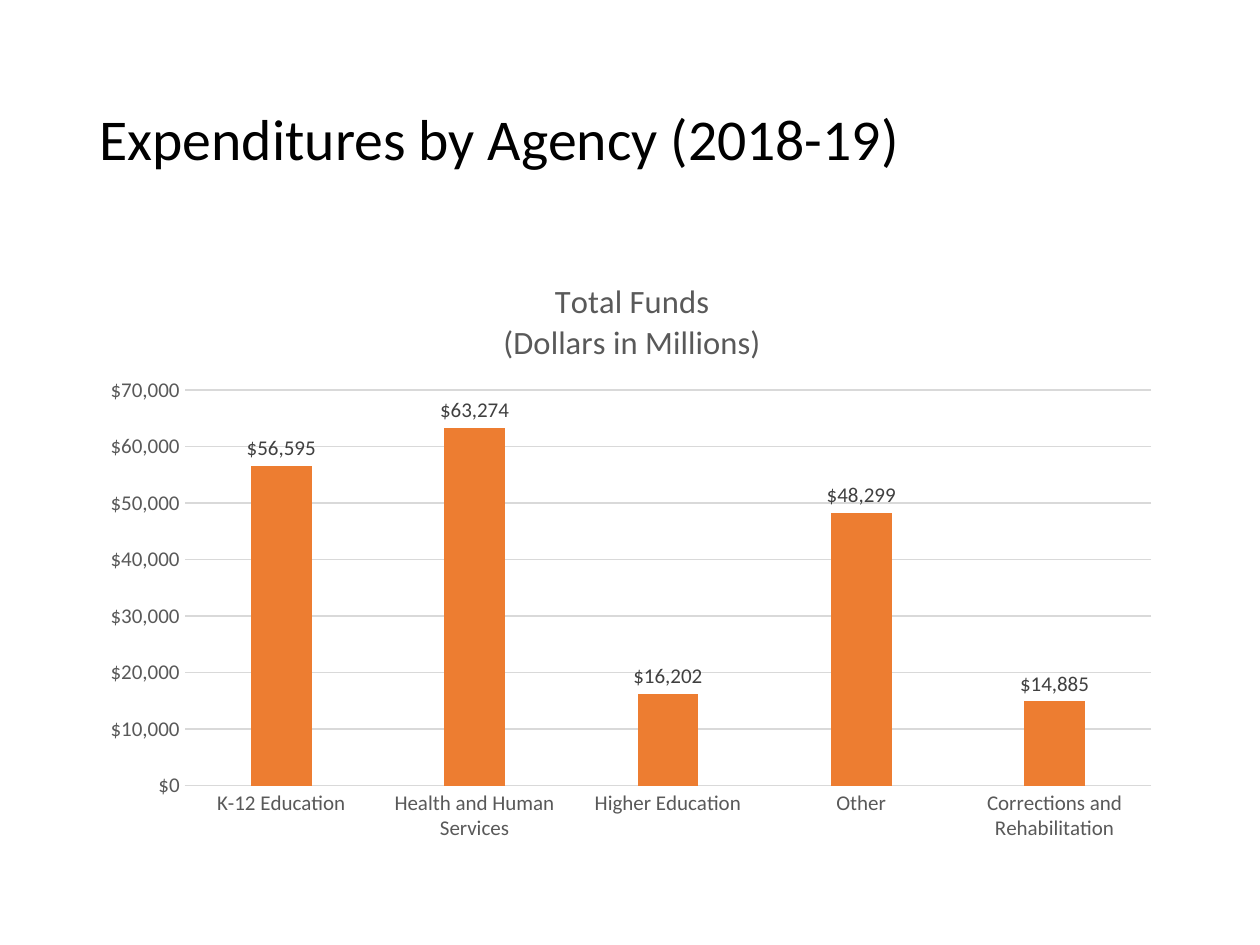
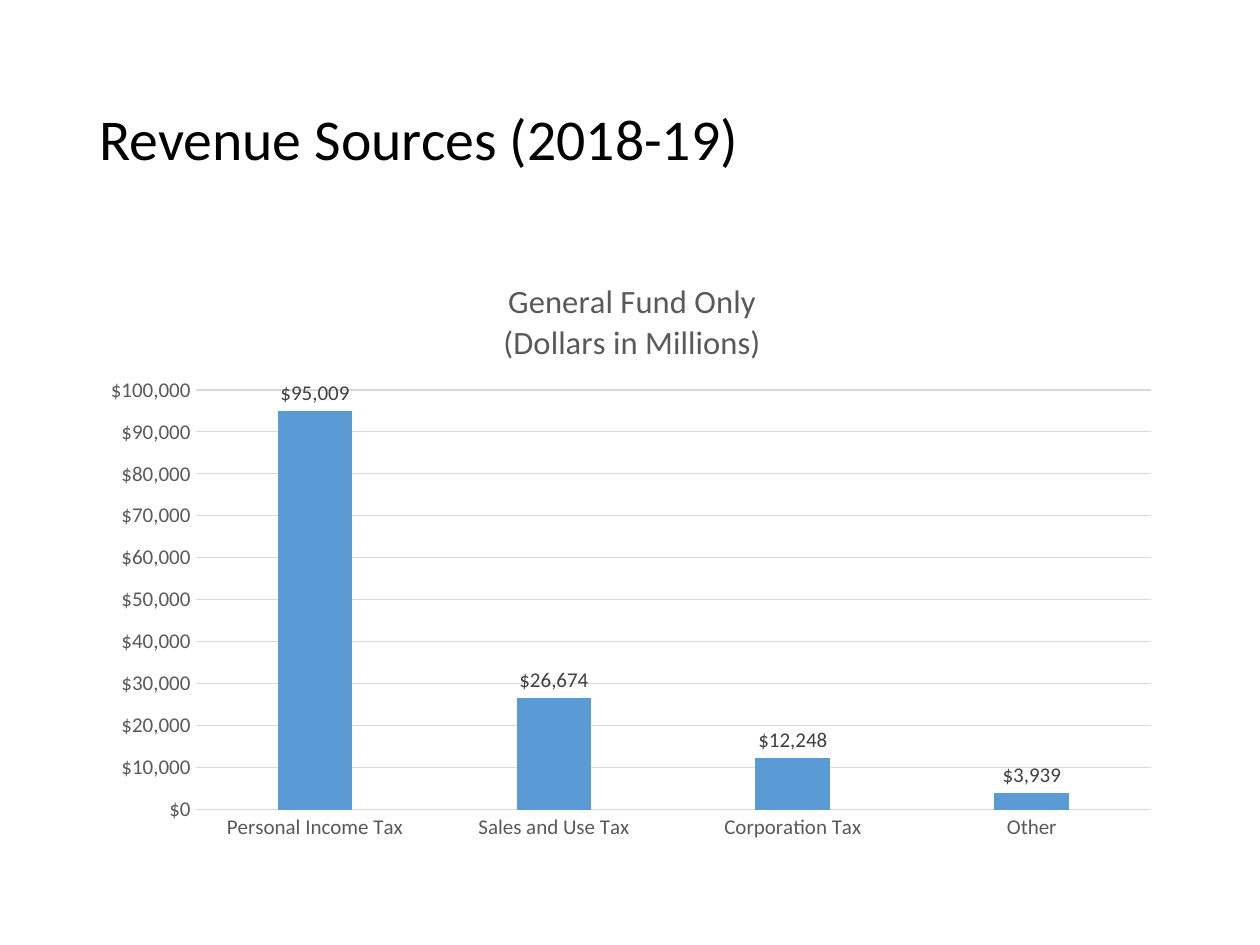
from dataclasses import dataclass
from pptx import Presentation
from pptx.chart.data import CategoryChartData
from pptx.dml.color import RGBColor
from pptx.enum.chart import XL_CHART_TYPE, XL_LABEL_POSITION, XL_TICK_MARK
from pptx.enum.text import MSO_ANCHOR, PP_ALIGN
from pptx.oxml import parse_xml
from pptx.oxml.ns import nsdecls
from pptx.util import Inches, Pt


@dataclass(frozen=True)
class Theme:
    font: str = "Calibri"
    ink: str = "000000"
    muted: str = "595959"
    label: str = "404040"
    rule: str = "D9D9D9"
    orange: str = "ED7D31"
    blue: str = "5B9BD5"
    title_size: float = 33
    chart_title_size: float = 18.6
    chart_size: float = 12
    rule_width: float = 0.75
    money: str = '"$"#,##0'


@dataclass(frozen=True)
class Box:
    left: float
    top: float
    width: float
    height: float

    def lengths(self):
        return [Inches(side) for side in (self.left, self.top, self.width, self.height)]


@dataclass(frozen=True)
class ChartPage:
    title: str
    chart_title: tuple
    values: dict
    color: str
    maximum: int
    plot: Box


THEME = Theme()
WIDTH, HEIGHT = 10, 7.5
MARGIN = 0.069 * WIDTH
CONTENT = WIDTH - 2 * MARGIN
TITLE_BOX = Box(MARGIN, 0.4, CONTENT, 1.45)
CHART_BOX = Box(MARGIN, 2, CONTENT, 4.76)

PAGES = [
    ChartPage(
        "Expenditures by Agency (2018-19)",
        ("Total Funds", "(Dollars in Millions)"),
        {
            "K-12 Education": 56595,
            "Health and Human Services": 63274,
            "Higher Education": 16202,
            "Other": 48299,
            "Corrections and Rehabilitation": 14885,
        },
        THEME.orange,
        70000,
        Box(0.09, 0.23, 0.89, 0.66),
    ),
    ChartPage(
        "Revenue Sources (2018-19)",
        ("General Fund Only", "(Dollars in Millions)"),
        {
            "Personal Income Tax": 95009,
            "Sales and Use Tax": 26674,
            "Corporation Tax": 12248,
            "Other": 3939,
        },
        THEME.blue,
        100000,
        Box(0.1, 0.23, 0.88, 0.7),
    ),
]


def style_font(font, size, color):
    font.name = THEME.font
    font.size = Pt(size)
    font.bold = False
    font.color.rgb = RGBColor.from_string(color)


def style_rule(line):
    line.color.rgb = RGBColor.from_string(THEME.rule)
    line.width = Pt(THEME.rule_width)


def manual_layout(settings):
    entries = "".join(f'<c:{name} val="{value}"/>' for name, value in settings.items())
    return parse_xml(
        f'<c:layout {nsdecls("c")}><c:manualLayout>{entries}</c:manualLayout></c:layout>'
    )


def add_title(page, box, text):
    frame = page.shapes.add_textbox(*box.lengths()).text_frame
    frame.word_wrap = True
    frame.vertical_anchor = MSO_ANCHOR.MIDDLE
    para = frame.paragraphs[0]
    para.line_spacing = 0.9
    span = para.add_run()
    span.text = text
    style_font(span.font, THEME.title_size, THEME.ink)


def add_chart_title(chart, lines):
    chart.has_title = True
    title = chart.chart_title
    frame = title.text_frame
    for index, line in enumerate(lines):
        para = frame.add_paragraph() if index else frame.paragraphs[0]
        para.alignment = PP_ALIGN.CENTER
        span = para.add_run()
        span.text = line
        style_font(span.font, THEME.chart_title_size, THEME.muted)
    element = title._element
    for layout in element.xpath("c:layout"):
        element.remove(layout)
    position = {"xMode": "edge", "yMode": "edge", "x": 0.38, "y": 0.04}
    element.xpath("c:tx")[0].addnext(manual_layout(position))


def style_axes(chart, maximum):
    for axis in (chart.category_axis, chart.value_axis):
        axis.major_tick_mark = XL_TICK_MARK.NONE
        axis.minor_tick_mark = XL_TICK_MARK.NONE
        style_font(axis.tick_labels.font, THEME.chart_size, THEME.muted)
    style_rule(chart.category_axis.format.line)
    value_axis = chart.value_axis
    value_axis.format.line.fill.background()
    value_axis.minimum_scale = 0
    value_axis.maximum_scale = maximum
    value_axis.major_unit = 10000
    value_axis.has_major_gridlines = True
    style_rule(value_axis.major_gridlines.format.line)
    value_axis.tick_labels.number_format = THEME.money
    value_axis.tick_labels.number_format_is_linked = False


def style_columns(plot, color):
    plot.gap_width = 219
    plot.overlap = -27
    plot.vary_by_categories = False
    series = plot.series[0]
    series.format.fill.solid()
    series.format.fill.fore_color.rgb = RGBColor.from_string(color)
    labels = series.data_labels
    labels.show_value = True
    labels.position = XL_LABEL_POSITION.OUTSIDE_END
    labels.number_format = THEME.money
    labels.number_format_is_linked = False
    style_font(labels.font, THEME.chart_size, THEME.label)


def place_plot(chart, box):
    area = chart._chartSpace.xpath("c:chart/c:plotArea")[0]
    for layout in area.xpath("c:layout"):
        area.remove(layout)
    area.insert(0, manual_layout({
        "layoutTarget": "inner", "xMode": "edge", "yMode": "edge",
        "x": box.left, "y": box.top, "w": box.width, "h": box.height,
    }))


def add_column_chart(page, box, content):
    data = CategoryChartData(number_format=THEME.money)
    data.categories = list(content.values)
    data.add_series("Series 1", list(content.values.values()))
    frame = page.shapes.add_chart(XL_CHART_TYPE.COLUMN_CLUSTERED, *box.lengths(), data)
    chart = frame.chart
    chart.has_legend = False
    style_font(chart.font, THEME.chart_size, THEME.ink)
    add_chart_title(chart, content.chart_title)
    style_axes(chart, content.maximum)
    style_columns(chart.plots[0], content.color)
    place_plot(chart, content.plot)


def add_chart_page(deck, content):
    page = deck.slides.add_slide(deck.slide_layouts[6])
    add_title(page, TITLE_BOX, content.title)
    add_column_chart(page, CHART_BOX, content)


def main():
    deck = Presentation()
    deck.slide_width, deck.slide_height = Inches(WIDTH), Inches(HEIGHT)
    for content in PAGES:
        add_chart_page(deck, content)
    deck.save("out.pptx")


if __name__ == "__main__":
    main()
